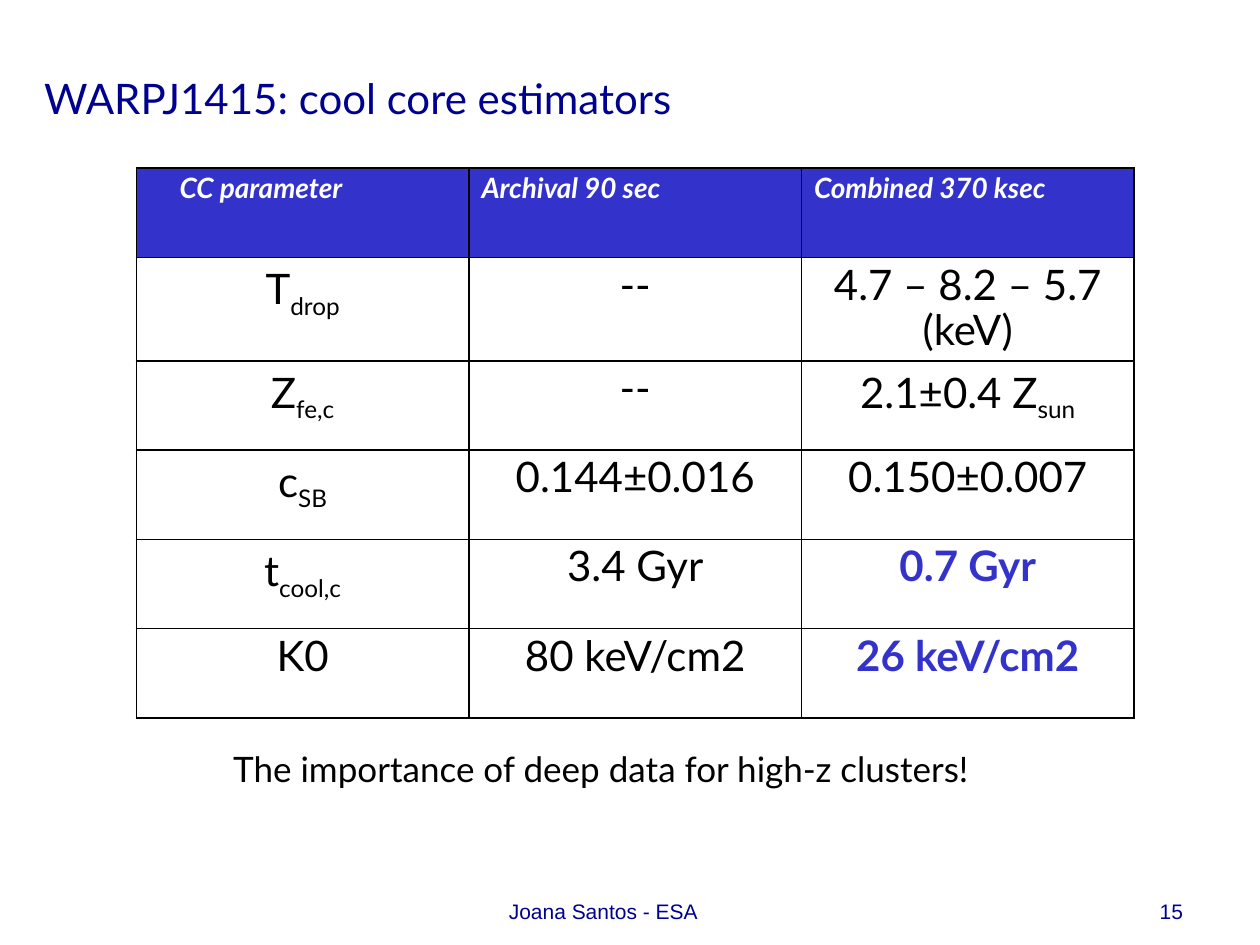
from lxml import etree
from pptx import Presentation
from pptx import util as u
from pptx.dml.color import RGBColor
from pptx.enum import text
from pptx.oxml import ns

COLORS = {"navy": "000090", "blue": "3333CC", "black": "000000", "white": "FFFFFF"}
HEADINGS = ["CC parameter", "Archival 90 sec", "Combined 370 ksec"]
ESTIMATORS = [
    [("T", "drop"), ("--",), ("4.7 – 8.2 – 5.7 (keV)",)],
    [("Z", "fe,c"), ("--",), ("2.1±0.4 Z", "sun")],
    [("c", "SB"), ("0.144±0.016",), ("0.150±0.007",)],
    [("t", "cool,c"), ("3.4 Gyr",), ("0.7 Gyr",)],
    [("K0",), ("80 keV/cm2",), ("26 keV/cm2",)],
]
HIGHLIGHTS = {"0.7 Gyr", "26 keV/cm2"}


def write(frame, words, subscript=None, font="Lato", size=24, color="black",
          bold=False, italic=False, align=text.PP_ALIGN.LEFT, spacing=0.9):
    frame.word_wrap = True
    para = frame.paragraphs[0]
    para.alignment = align
    para.line_spacing = spacing
    for part in filter(None, (words, subscript)):
        span = para.add_run()
        span.text = part
        span.font.name = font
        span.font.size = u.Pt(size)
        span.font.bold = bold
        span.font.italic = italic
        span.font.color.rgb = RGBColor.from_string(COLORS[color])
        if part is subscript:
            span._r.get_or_add_rPr().set("baseline", "-25000")


def add_text(page, left, top, width, height, words, **look):
    box = page.shapes.add_textbox(u.Cm(left), u.Cm(top), u.Cm(width), u.Cm(height))
    write(box.text_frame, words, **look)
    return box


def style_cell(cell, fill=None):
    properties = cell._tc.get_or_add_tcPr()
    for side in ("a:lnL", "a:lnR", "a:lnT", "a:lnB"):
        line = etree.SubElement(properties, ns.qn(side), w=str(u.Pt(1)))
        solid = etree.SubElement(line, ns.qn("a:solidFill"))
        etree.SubElement(solid, ns.qn("a:srgbClr"), val=COLORS["black"])
    if fill:
        cell.fill.solid()
        cell.fill.fore_color.rgb = RGBColor.from_string(COLORS[fill])
    else:
        cell.fill.background()


def add_title(page, left, top, width, height):
    box = add_text(page, left, top, width, height,
                   "WARPJ1415: cool core estimators", color="navy", spacing=1.0)
    box.text_frame.margin_top = u.Cm(1.04)


def add_estimators(page, left, top, width, height):
    table = page.shapes.add_table(
        len(ESTIMATORS) + 1, len(HEADINGS),
        u.Cm(left), u.Cm(top), u.Cm(width), u.Cm(height)).table
    table.first_row = False
    table.horz_banding = False
    for column, heading in enumerate(HEADINGS):
        cell = table.cell(0, column)
        style_cell(cell, "blue")
        write(cell.text_frame, heading, size=16, color="white", bold=True, italic=True)
    table.cell(0, 0).margin_left = u.Cm(0.87)
    for row, values in enumerate(ESTIMATORS, 1):
        for column, value in enumerate(values):
            cell = table.cell(row, column)
            style_cell(cell)
            strong = value[0] in HIGHLIGHTS
            write(cell.text_frame, *value, bold=strong,
                  color="blue" if strong else "black", align=text.PP_ALIGN.CENTER)


def add_footer(page, left, top, width, height):
    look = dict(font="Arial", size=12, color="navy", spacing=1.0)
    add_text(page, left, top, 11.63, height, "Joana Santos - ESA",
             align=text.PP_ALIGN.CENTER, **look)
    add_text(page, left + width - 5.89, top, 5.89, height, "15",
             align=text.PP_ALIGN.RIGHT, **look)


def main():
    deck = Presentation()
    deck.slide_width, deck.slide_height = u.Cm(25.4), u.Cm(19.05)
    page = deck.slides.add_slide(deck.slide_layouts[6])
    add_title(page, 0.64, 0.43, 23.5, 2.49)
    add_estimators(page, 2.75, 3.39, 20.11, 10.8)
    add_text(page, 4.45, 15.04, 19.05, 2.06,
             "The importance of deep data for high-z clusters!", size=20)
    add_footer(page, 6.35, 17.98, 17.75, 1.32)
    deck.save("out.pptx")


if __name__ == "__main__":
    main()
